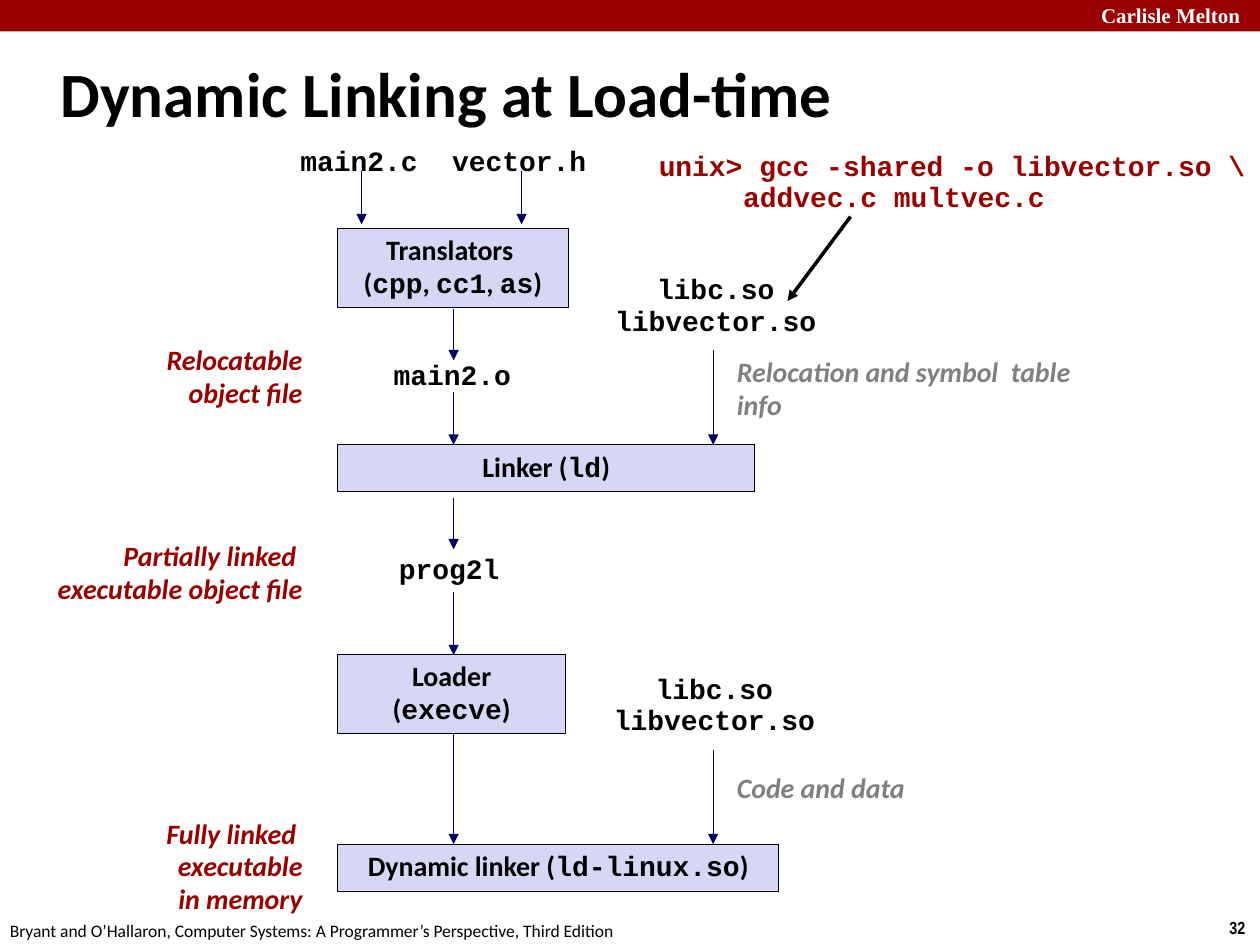
"""Build the slide on dynamic linking at load time."""
from dataclasses import dataclass

import lxml.etree
import pptx
import pptx.dml.color
import pptx.enum.shapes
import pptx.enum.text
import pptx.oxml.ns
import pptx.util

Inches = pptx.util.Inches
ALIGN = pptx.enum.text.PP_ALIGN
ANCHOR = pptx.enum.text.MSO_ANCHOR


@dataclass(frozen=True)
class Theme:
    """Colours, fonts and type sizes of the slide."""
    red: str = "990000"
    lilac: str = "D6D6F5"
    navy: str = "000066"
    grey: str = "808080"
    black: str = "000000"
    white: str = "FFFFFF"
    sans: str = "Calibri"
    mono: str = "Courier New"
    serif: str = "Times New Roman"
    narrow: str = "Arial Narrow"
    title: int = 36
    label: int = 16
    header: int = 12
    footer: int = 10


THEME = Theme()
FLOW_X = 3.6
LIBRARY_X = 5.66
STAGE_LEFT = 2.68


def rgb(colour):
    """Turn a hex string into a colour."""
    return pptx.dml.color.RGBColor.from_string(colour)


def write(frame, text, font=THEME.sans, size=THEME.label, colour=THEME.black,
          bold=True, italic=False, align=ALIGN.LEFT, spacing=None):
    """Write lines of text, setting parts between backticks in the code font."""
    for number, line in enumerate(text.split("\n")):
        para = frame.add_paragraph() if number else frame.paragraphs[0]
        para.alignment = align
        para.line_spacing = spacing
        para.font.name = font
        para.font.size = pptx.util.Pt(size)
        para.font.bold = bold
        para.font.italic = italic
        para.font.color.rgb = rgb(colour)
        for part, words in enumerate(line.split("`")):
            if words:
                span = para.add_run()
                span.text = words
                if part % 2:
                    span.font.name = THEME.mono


def add_text(page, place, text, wrap=True, **style):
    """Add a text box."""
    box = page.shapes.add_textbox(*map(Inches, place))
    box.text_frame.word_wrap = wrap
    write(box.text_frame, text, **style)
    return box


def add_code(page, place, text, align=ALIGN.CENTER, colour=THEME.black):
    """Add file names or a command in the code font."""
    return add_text(page, place, text, wrap=False, font=THEME.mono,
                    align=align, colour=colour, spacing=0.94)


def add_note(page, place, text, colour, align):
    """Add an italic remark beside the flow."""
    add_text(page, place, text, colour=colour, italic=True, align=align, spacing=0.98)


def add_rectangle(page, place, fill):
    """Add a plain filled rectangle."""
    box = page.shapes.add_shape(pptx.enum.shapes.MSO_SHAPE.RECTANGLE, *map(Inches, place))
    box.shadow.inherit = False
    box.fill.solid()
    box.fill.fore_color.rgb = rgb(fill)
    box.line.fill.background()
    return box


def add_stage(page, top, width, height, text):
    """Add a tool of the linking flow."""
    box = add_rectangle(page, (STAGE_LEFT, top, width, height), THEME.lilac)
    box.line.color.rgb = rgb(THEME.black)
    box.line.width = pptx.util.Pt(0.25)
    box.text_frame.word_wrap = True
    box.text_frame.vertical_anchor = ANCHOR.TOP
    write(box.text_frame, text, align=ALIGN.CENTER, spacing=0.98)


def add_arrow(page, start, end, colour=THEME.navy, width=0.25):
    """Add a straight arrow."""
    arrow = page.shapes.add_connector(
        pptx.enum.shapes.MSO_CONNECTOR.STRAIGHT, *map(Inches, start + end))
    arrow.line.color.rgb = rgb(colour)
    arrow.line.width = pptx.util.Pt(width)
    qualify = pptx.oxml.ns.qn
    lxml.etree.SubElement(arrow.line._get_or_add_ln(), qualify("a:tailEnd"), type="triangle")
    lxml.etree.SubElement(arrow._element.spPr, qualify("a:effectLst"))


def add_frame(page):
    """Add the header band, footer, page number and title."""
    add_rectangle(page, (0, 0, 10, 0.25), THEME.red)
    add_text(page, (8.64, -0.03, 1.43, 0.3), "Carlisle Melton",
             font=THEME.serif, size=THEME.header, colour=THEME.white)
    add_text(page, (9.66, 7.23, 0.34, 0.27), "32", wrap=False,
             font=THEME.narrow, size=THEME.footer)
    add_text(page, (-0.02, 7.25, 5.08, 0.27),
             "Bryant and O’Hallaron, Computer Systems: "
             "A Programmer’s Perspective, Third Edition",
             wrap=False, size=THEME.footer, bold=False)
    title = page.shapes.title
    title.left, title.top, title.width, title.height = map(Inches, (0.38, 0.31, 9.53, 0.85))
    title.text_frame.vertical_anchor = ANCHOR.MIDDLE
    write(title.text_frame, "Dynamic Linking at Load-time", size=THEME.title)


def main():
    """Build and save the slide."""
    deck = pptx.Presentation()
    deck.slide_width, deck.slide_height = Inches(10), Inches(7.5)
    page = deck.slides.add_slide(deck.slide_layouts[5])
    add_frame(page)

    for top, width, height, text in (
            (1.81, 1.83, 0.63, "Translators \n(`cpp`, `cc1`, `as`)"),
            (3.53, 3.31, 0.37, "Linker (`ld`)"),
            (5.19, 1.81, 0.63, "Loader (`execve`)"),
            (6.7, 3.5, 0.37, "Dynamic linker (`ld-linux.so`)")):
        add_stage(page, top, width, height, text)

    for x, top, bottom in (
            (2.87, 1.36, 1.78), (4.14, 1.36, 1.78),
            (FLOW_X, 2.45, 2.86), (FLOW_X, 3.11, 3.53), (FLOW_X, 3.95, 4.36),
            (FLOW_X, 4.7, 5.2), (FLOW_X, 5.82, 6.7),
            (LIBRARY_X, 2.78, 3.53), (LIBRARY_X, 5.95, 6.7)):
        add_arrow(page, (x, top), (x, bottom))
    add_arrow(page, (6.75, 1.72), (6.25, 2.39), THEME.black, 2)

    libraries = "libc.so\nlibvector.so"
    for place, text in (
            ((2.28, 1.11, 1.14, 0.36), "main2.c"),
            ((3.48, 1.11, 1.28, 0.36), "vector.h"),
            ((3.02, 2.81, 1.14, 0.36), "main2.o"),
            ((3.06, 4.35, 1.01, 0.36), "prog2l"),
            ((4.77, 2.13, 1.82, 0.61), libraries),
            ((4.76, 5.3, 1.82, 0.61), libraries)):
        add_code(page, place, text)
    command = add_code(page, (5.13, 1.15, 4.92, 0.61),
                       "unix> gcc -shared -o libvector.so \\\naddvec.c multvec.c",
                       ALIGN.LEFT, THEME.red)
    continuation = command.text_frame.paragraphs[1]
    continuation._p.get_or_add_pPr().set("marL", str(Inches(0.67)))

    for place, text in (
            ((1, 2.68, 1.5, 0.63), "Relocatable\nobject file"),
            ((-0.25, 4.24, 2.75, 0.63), "Partially linked \nexecutable object file"),
            ((0.58, 6.44, 1.92, 0.89), "Fully linked \nexecutable\nin memory")):
        add_note(page, place, text, THEME.red, ALIGN.RIGHT)
    for place, text in (
            ((5.75, 2.78, 2.85, 0.63), "Relocation and symbol  table info"),
            ((5.75, 6.08, 1.94, 0.37), "Code and data")):
        add_note(page, place, text, THEME.grey, ALIGN.LEFT)

    deck.save("out.pptx")


if __name__ == "__main__":
    main()
